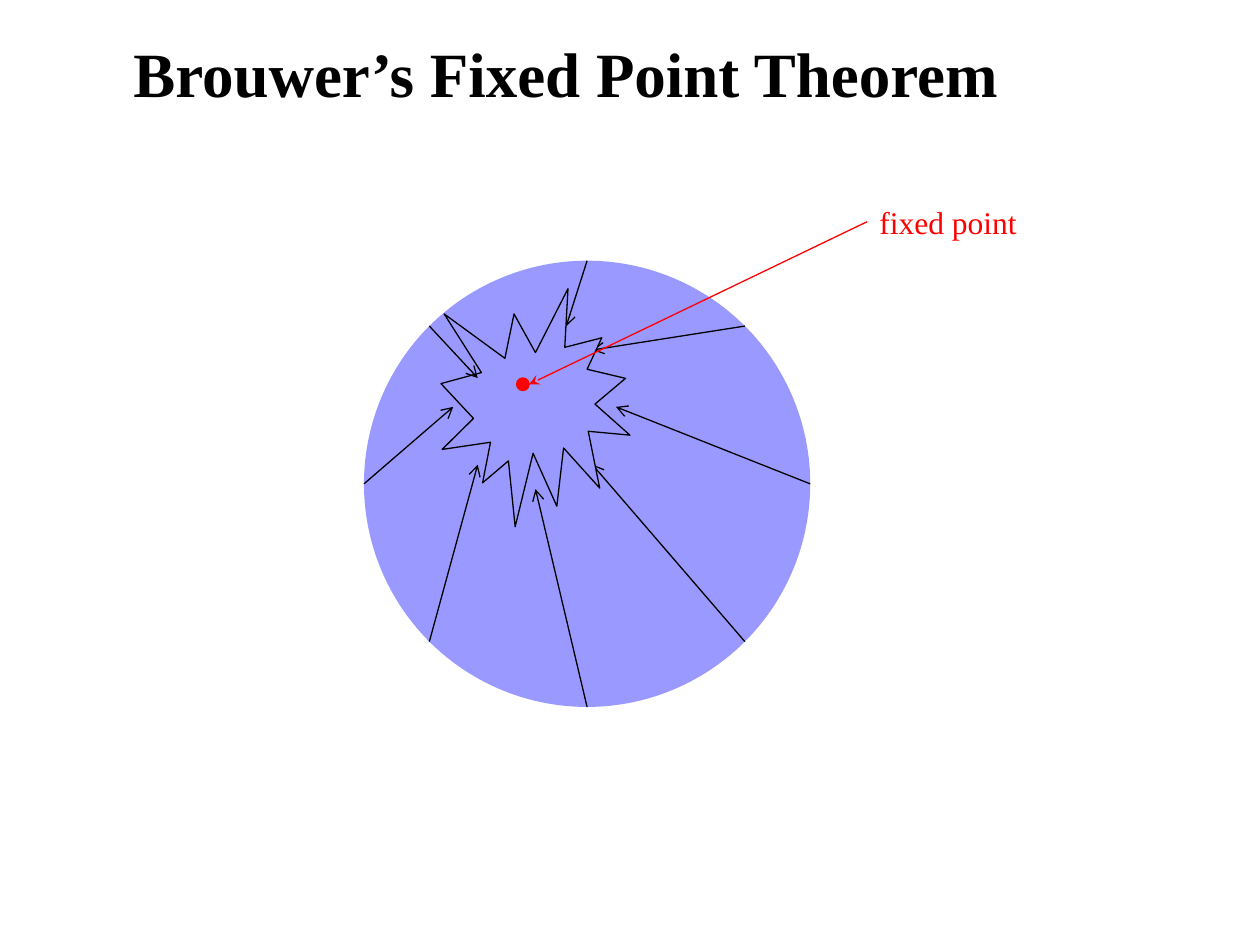
import math

from lxml import etree
from pptx import Presentation
from pptx.dml.color import RGBColor
from pptx.enum import shapes, text
from pptx.oxml.ns import qn
from pptx.util import Pt

# Content
TITLE = "Brouwer’s Fixed Point Theorem"
LABEL = "fixed point"
FONT = "Times New Roman"
BLACK, RED, DISK = "000000", "FF0000", "9999FF"

CENTER_X, CENTER_Y, RADIUS = 335.5, 276.5, 127.5
SEAL = (252, 165, 108, 136)
DOT = (295.2, 216, 7.2, 7.2)
LABEL_BOX = (495.5, 112.3, 98.6, 28.8)
TITLE_BOX = (69, -3.6, 590, 90)

# Angle of each boundary point (clockwise from east) and where it is mapped
OUTER_MAPS = [
    (180, (259, 232.5)),
    (135, (273, 265.5)),
    (90, (306, 279.5)),
    (45, (338.5, 265.5)),
    (315, (338.5, 200)),
    (0, (352, 232.5)),
    (270, (323.5, 186.5)),
]
FRONT_MAP = (225, (273, 216))


def color(value):
    return RGBColor.from_string(value)


def add_shape(kind, box, fill, line=None):
    sp = s.shapes.add_shape(kind, *map(Pt, box))
    sp.shadow.inherit = False
    sp.fill.solid()
    sp.fill.fore_color.rgb = color(fill)
    if line:
        sp.line.color.rgb = color(line)
        sp.line.width = Pt(0.75)
    else:
        sp.line.fill.background()
    return sp


def add_arrow(start, end, line, head):
    arrow = s.shapes.add_connector(
        shapes.MSO_CONNECTOR.STRAIGHT, *map(Pt, (*start, *end)))
    arrow.line.color.rgb = color(line)
    arrow.line.width = Pt(0.75)
    etree.SubElement(arrow.line._get_or_add_ln(), qn("a:tailEnd"), type=head)
    etree.SubElement(arrow._element.spPr, qn("a:effectLst"))
    return arrow


def add_map(angle, target):
    a = math.radians(angle)
    start = (CENTER_X + RADIUS * math.cos(a), CENTER_Y + RADIUS * math.sin(a))
    add_arrow(start, target, BLACK, "arrow")


def write(sp, words, size, ink, bold=False):
    tf = sp.text_frame
    tf.text = words
    p = tf.paragraphs[0]
    p.alignment = text.PP_ALIGN.LEFT
    font = p.runs[0].font
    font.name, font.size, font.bold = FONT, Pt(size), bold
    font.color.rgb = color(ink)
    return tf


prs = Presentation()
prs.slide_width, prs.slide_height = Pt(720), Pt(540)
s = prs.slides.add_slide(prs.slide_layouts[5])

# Title
title = s.shapes.title
title.left, title.top, title.width, title.height = map(Pt, TITLE_BOX)
tf = write(title, TITLE, 36, BLACK, bold=True)
tf.vertical_anchor = text.MSO_ANCHOR.MIDDLE
tf.word_wrap = True

# Disk, arrows and the image of the disk
add_shape(shapes.MSO_SHAPE.OVAL,
          (CENTER_X - RADIUS, CENTER_Y - RADIUS, 2 * RADIUS, 2 * RADIUS), DISK)
for angle, target in OUTER_MAPS:
    add_map(angle, target)
add_shape(shapes.MSO_SHAPE.EXPLOSION1, SEAL, DISK, BLACK)

# Fixed point with its label
label = s.shapes.add_textbox(*map(Pt, LABEL_BOX))
tf = write(label, LABEL, 18, RED)
tf.word_wrap = False
tf.auto_size = text.MSO_AUTO_SIZE.SHAPE_TO_FIT_TEXT
x, y, w, h = DOT
pointer = add_arrow(LABEL_BOX[:2], (x + w, y + h / 2), RED, "stealth")
pointer.begin_connect(label, 1)
add_shape(shapes.MSO_SHAPE.OVAL, DOT, RED, RED)
add_map(*FRONT_MAP)

prs.save("out.pptx")
